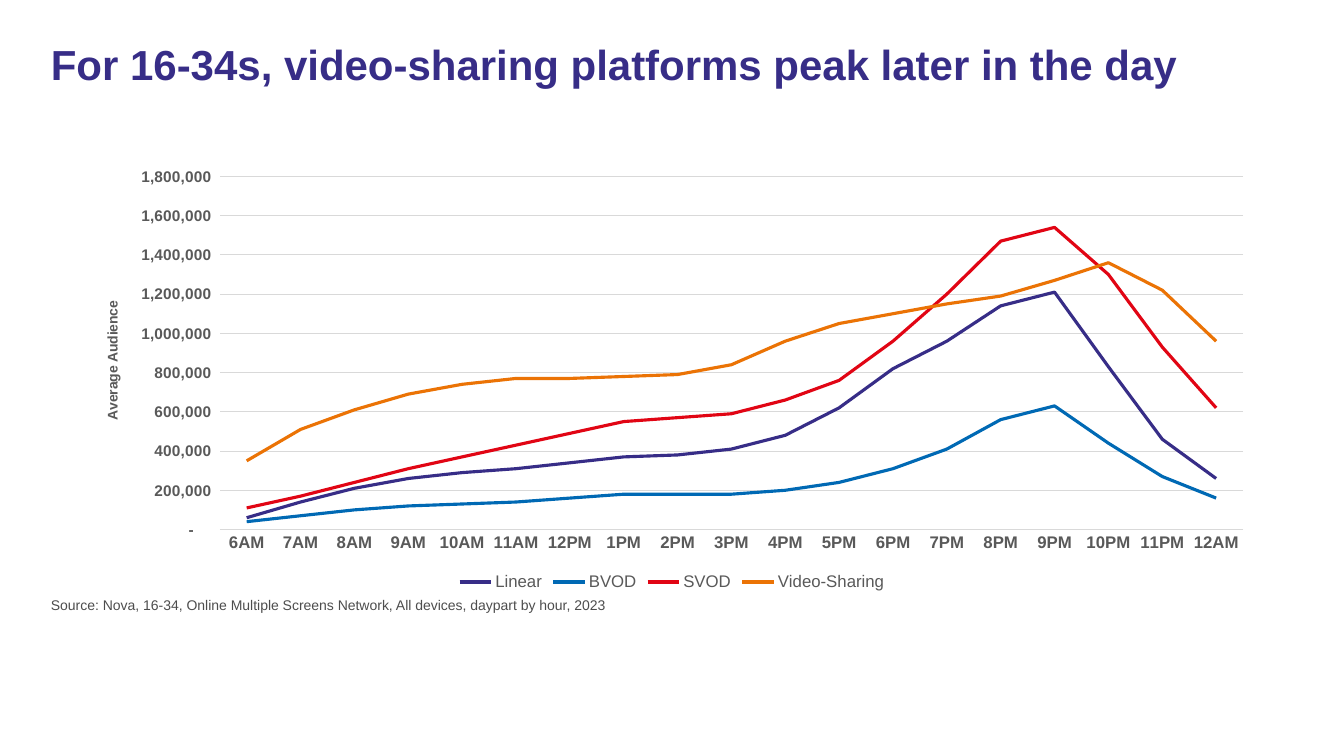
from dataclasses import dataclass

from lxml.etree import SubElement
from pptx import Presentation
from pptx.chart.data import CategoryChartData as ChartData
from pptx.dml.color import RGBColor as Rgb
from pptx.enum.chart import XL_CHART_TYPE as Kind
from pptx.enum.chart import XL_LEGEND_POSITION as Side
from pptx.enum.chart import XL_TICK_MARK as Tick
from pptx.oxml.ns import qn
from pptx.util import Emu, Pt

SCALE = 914400 / 100.8
WIDE, HIGH = 1344, 756


@dataclass(frozen=True)
class Theme:
    face: str = "Arial"
    navy: str = "372D87"
    blue: str = "0069B4"
    red: str = "E10514"
    orange: str = "EB7305"
    label: str = "595959"
    note: str = "4D4D4D"
    grid: str = "D9D9D9"
    head: int = 30
    text: int = 12
    scale: int = 11
    small: int = 10
    hair: float = 0.75
    thick: float = 2.25


HOURS = ["6AM", "7AM", "8AM", "9AM", "10AM", "11AM", "12PM", "1PM", "2PM", "3PM",
         "4PM", "5PM", "6PM", "7PM", "8PM", "9PM", "10PM", "11PM", "12AM"]

# Average audience in thousands, one value per hour
VIEWS = {
    "Linear": [60, 140, 210, 260, 290, 310, 340, 370, 380, 410,
               480, 620, 820, 960, 1140, 1210, 830, 460, 260],
    "BVOD": [40, 70, 100, 120, 130, 140, 160, 180, 180, 180,
             200, 240, 310, 410, 560, 630, 440, 270, 160],
    "SVOD": [110, 170, 240, 310, 370, 430, 490, 550, 570, 590,
             660, 760, 960, 1200, 1470, 1540, 1300, 930, 620],
    "Video-Sharing": [350, 510, 610, 690, 740, 770, 770, 780, 790, 840,
                      960, 1050, 1100, 1150, 1190, 1270, 1360, 1220, 960],
}


def px(*nums):
    return [Emu(round(n * SCALE)) for n in nums]


def put(item, props):
    for name, value in props.items():
        setattr(item, name, value)


def place(node, index, **spots):
    """Give a chart part a fixed layout, as fractions of the chart."""
    for old in node.findall(qn("c:layout")):
        node.remove(old)
    layout = node.makeelement(qn("c:layout"), {})
    node.insert(index, layout)
    manual = SubElement(layout, qn("c:manualLayout"))
    for tag, value in spots.items():
        SubElement(manual, qn(f"c:{tag}")).set("val", str(value))


class Page:
    def __init__(self, deck, theme):
        self.theme = theme
        self.slide = deck.slides.add_slide(deck.slide_layouts[6])

    def style(self, font, size, color, bold=False):
        put(font, {"name": self.theme.face, "size": Pt(size), "bold": bold})
        font.color.rgb = Rgb.from_string(color)

    def stroke(self, line, color, width):
        line.color.rgb = Rgb.from_string(color)
        line.width = Pt(width)

    def text(self, box, words, size, color, bold=False, lead=1.0):
        frame = self.slide.shapes.add_textbox(*px(*box)).text_frame
        frame.word_wrap = True
        para = frame.paragraphs[0]
        para.line_spacing = lead
        run = para.add_run()
        run.text = words
        self.style(run.font, size, color, bold)

    def chart(self, box, cats, data, colors):
        theme = self.theme
        table = ChartData(number_format="#,##0")
        table.categories = cats
        for name, vals in data.items():
            table.add_series(name, [v * 1000 for v in vals])
        chart = self.slide.shapes.add_chart(Kind.LINE, *px(*box), table).chart
        self.style(chart.font, theme.small, theme.label)
        put(chart, {"has_title": False, "has_legend": True})
        put(chart.legend, {"position": Side.BOTTOM, "include_in_layout": False})
        self.style(chart.legend.font, theme.text, theme.label)

        plot = chart.plots[0]
        plot.vary_by_categories = False
        for line, color in zip(plot.series, colors):
            line.smooth = False
            self.stroke(line.format.line, color, theme.thick)
        self.axes(chart)
        area = chart._chartSpace.find(".//" + qn("c:plotArea"))
        place(area, 0, layoutTarget="inner", xMode="edge", yMode="edge",
              x=0.12, y=0.04, w=0.86, h=0.81)

    def axes(self, chart):
        theme = self.theme
        hours, count = chart.category_axis, chart.value_axis
        for axis, size in ((hours, theme.text), (count, theme.scale)):
            put(axis, {"major_tick_mark": Tick.NONE, "minor_tick_mark": Tick.NONE})
            self.style(axis.tick_labels.font, size, theme.label, True)
        self.stroke(hours.format.line, theme.grid, theme.hair)
        put(count, {"minimum_scale": 0, "maximum_scale": 1800000,
                    "major_unit": 200000, "has_major_gridlines": True})
        count.format.line.fill.background()
        self.stroke(count.major_gridlines.format.line, theme.grid, theme.hair)
        put(count.tick_labels, {
            "number_format": '_-* #,##0_-;\\-* #,##0_-;_-* "-"??_-;_-@_',
            "number_format_is_linked": False})

        title = count.axis_title
        run = title.text_frame.paragraphs[0].add_run()
        run.text = "Average Audience"
        self.style(run.font, theme.small, theme.label, True)
        body = title._element.find(".//" + qn("a:bodyPr"))
        for name, value in {"rot": "-5400000", "vert": "horz"}.items():
            body.set(name, value)
        place(title._element, 1, xMode="edge", yMode="edge", x=0.02, y=0.32)


def main():
    deck = Presentation()
    deck.slide_width, deck.slide_height = px(WIDE, HIGH)
    theme = Theme()
    page = Page(deck, theme)
    page.text((41, 39, 1250, 113),
              "For 16-34s, video-sharing platforms peak later in the day",
              theme.head, theme.navy, True, 0.9)
    page.text((41, 592, 1250, 33),
              "Source: Nova, 16-34, Online Multiple Screens Network, "
              "All devices, daypart by hour, 2023",
              theme.small, theme.note)
    page.chart((77, 159, 1190, 436), HOURS, VIEWS,
               (theme.navy, theme.blue, theme.red, theme.orange))
    deck.save("out.pptx")


if __name__ == "__main__":
    main()
